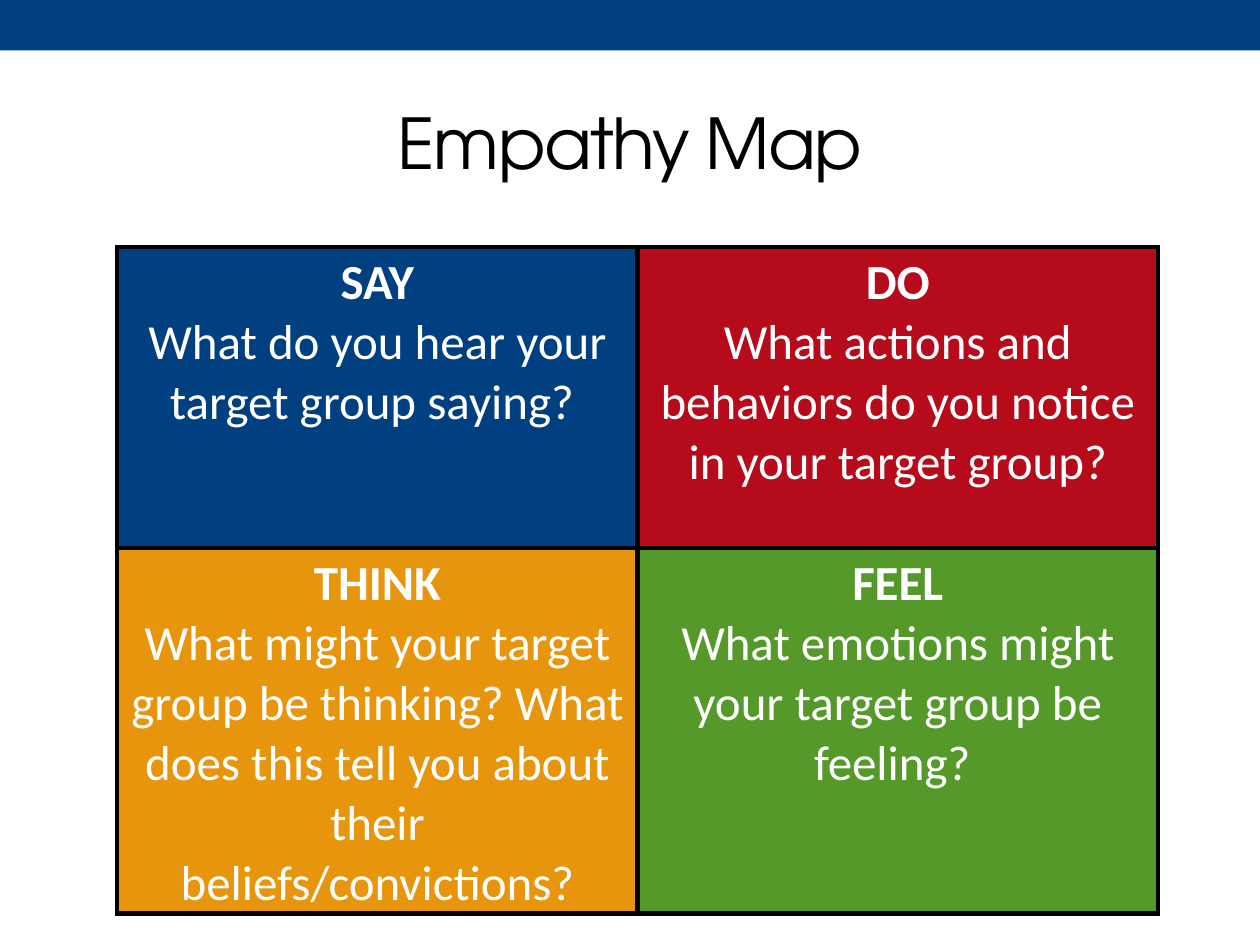
from dataclasses import dataclass
from itertools import product

from lxml.etree import SubElement
from pptx import Presentation
from pptx.dml.color import RGBColor as Color
from pptx.enum.shapes import MSO_SHAPE as Shape
from pptx.enum.text import MSO_ANCHOR as Anchor, PP_ALIGN as Align
from pptx.oxml.ns import qn
from pptx.util import Inches, Pt


@dataclass(frozen=True)
class Theme:
    blue: str = "004080"
    red: str = "B50B1B"
    orange: str = "E8950E"
    green: str = "55992B"
    black: str = "000000"
    white: str = "FFFFFF"
    title_font: str = "TeX Gyre Adventor"
    body_font: str = "Calibri"
    title_size: int = 40
    body_size: int = 28
    border: int = 3


THEME = Theme()
WIDTH, HEIGHT = Inches(10), Inches(7.5)
COLUMNS = ROWS = 2
QUADRANTS = [
    ("SAY", "What do you hear your target group saying? ", THEME.blue),
    ("DO", "What actions and behaviors do you notice in your target group?", THEME.red),
    ("THINK", "What might your target group be thinking? "
              "What does this tell you about their beliefs/convictions?", THEME.orange),
    ("FEEL", "What emotions might your target group be feeling? ", THEME.green),
]


def paint(target, color):
    target.fill.solid()
    target.fill.fore_color.rgb = Color.from_string(color)


def write(para, text, *, font, size, color, bold=False, spacing=None):
    para.alignment = Align.CENTER
    span = para.add_run()
    span.text = text
    span.font.name = font
    span.font.size = Pt(size)
    span.font.bold = bold
    span.font.color.rgb = Color.from_string(color)
    if spacing is not None:
        span.font._element.set("spc", str(spacing * 100))


def add_band(page):
    band = page.shapes.add_shape(Shape.RECTANGLE, 0, 0, WIDTH, Inches(0.4))
    band.shadow.inherit = False
    band.line.fill.background()
    paint(band, THEME.blue)


def add_title(page, text):
    margin = Inches(0.5)
    box = page.shapes.add_textbox(margin, Inches(0.58), WIDTH - 2 * margin, Inches(1.08))
    frame = box.text_frame
    frame.word_wrap = True
    frame.vertical_anchor = Anchor.MIDDLE
    write(frame.paragraphs[0], text, font=THEME.title_font, size=THEME.title_size,
          color=THEME.black, spacing=-1)


def add_borders(cell):
    properties = cell._tc.get_or_add_tcPr()
    for position, side in enumerate(("lnL", "lnR", "lnT", "lnB")):
        line = SubElement(properties, qn(f"a:{side}"), w=str(Pt(THEME.border)))
        fill = SubElement(line, qn("a:solidFill"))
        SubElement(fill, qn("a:srgbClr"), val=THEME.black)
        properties.insert(position, line)


def fill_quadrant(cell, heading, question, color):
    paint(cell, color)
    add_borders(cell)
    frame = cell.text_frame
    style = dict(font=THEME.body_font, size=THEME.body_size, color=THEME.white)
    write(frame.paragraphs[0], heading, bold=True, **style)
    write(frame.add_paragraph(), question, **style)


def add_empathy_grid(page):
    column_width, row_height = Inches(4.13), Inches(2.39)
    grid = page.shapes.add_table(ROWS, COLUMNS, Inches(0.93), Inches(1.96),
                                 COLUMNS * column_width, ROWS * row_height).table
    grid.first_row = grid.horz_banding = False
    for (row, column), quadrant in zip(product(range(ROWS), range(COLUMNS)), QUADRANTS):
        fill_quadrant(grid.cell(row, column), *quadrant)


def main():
    deck = Presentation()
    deck.slide_width, deck.slide_height = WIDTH, HEIGHT
    page = deck.slides.add_slide(deck.slide_layouts[6])
    add_band(page)
    add_title(page, "Empathy Map")
    add_empathy_grid(page)
    deck.save("out.pptx")


if __name__ == "__main__":
    main()
